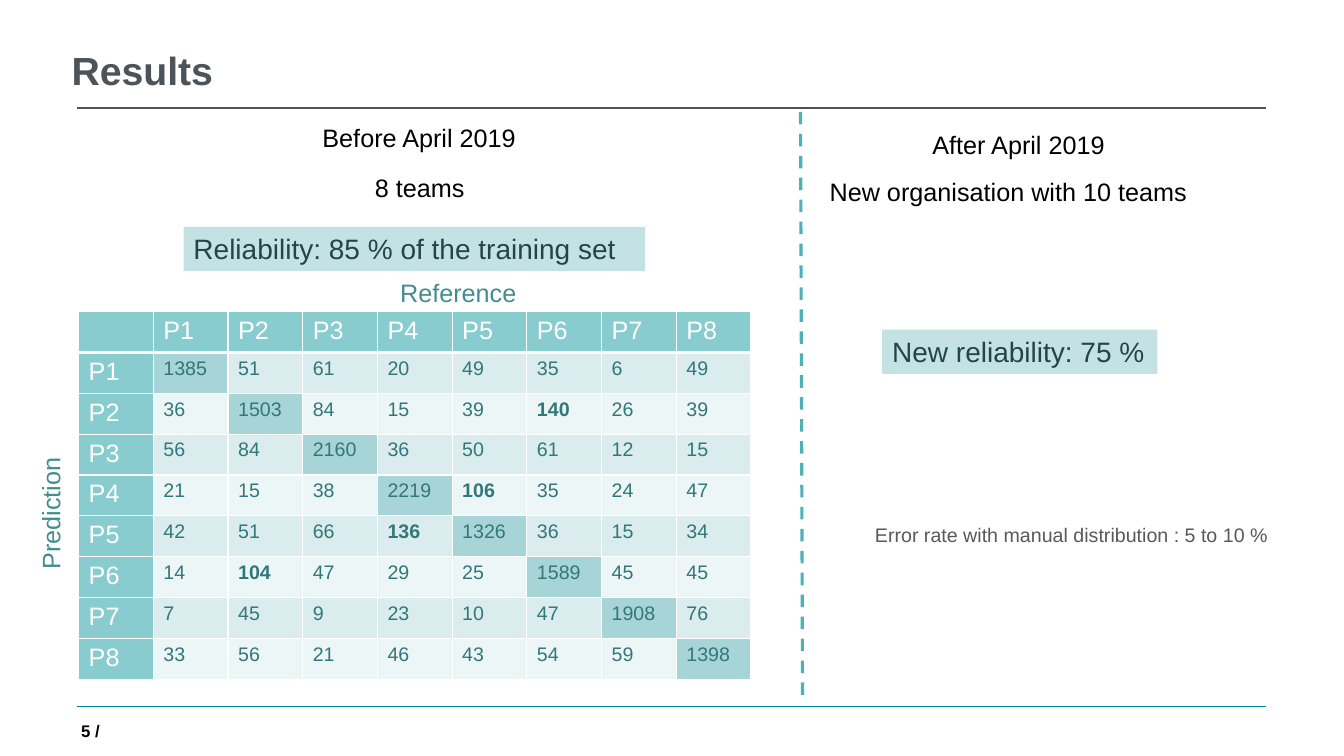
import pptx
import pptx.util
import pptx.dml.color
import pptx.enum.dml
import pptx.enum.shapes
import pptx.enum.text
import pptx.oxml
import pptx.oxml.ns

SCALE = 9144  # EMU per px, 100 px to the inch
WHITE, TEAL = "FFFFFF", "89CCCF"
DIAGONAL, BANDS = "A7D4D7", ("DAECED", "EDF6F6")
ANCHOR = pptx.enum.text.MSO_ANCHOR
ALIGN = pptx.enum.text.PP_ALIGN

TEAMS = ["P1", "P2", "P3", "P4", "P5", "P6", "P7", "P8"]
COUNTS = [
    [1385, 51, 61, 20, 49, 35, 6, 49],
    [36, 1503, 84, 15, 39, 140, 26, 39],
    [56, 84, 2160, 36, 50, 61, 12, 15],
    [21, 15, 38, 2219, 106, 35, 24, 47],
    [42, 51, 66, 136, 1326, 36, 15, 34],
    [14, 104, 47, 29, 25, 1589, 45, 45],
    [7, 45, 9, 23, 10, 47, 1908, 76],
    [33, 56, 21, 46, 43, 54, 59, 1398],
]


def px(n):
    return pptx.util.Emu(n * SCALE)


def rgb(code):
    return pptx.dml.color.RGBColor.from_string(code)


def set_text(tf, text, size, color, bold=False, align=ALIGN.LEFT):
    p = tf.paragraphs[0]
    p.alignment = align
    r = p.add_run()
    r.text = text
    font = {"name": "Arial", "size": pptx.util.Pt(size), "bold": bold}
    for key, value in font.items():
        setattr(r.font, key, value)
    r.font.color.rgb = rgb(color)


def add_text(s, box, text, size, color, rotation=0, frame=None, **style):
    sp = s.shapes.add_textbox(*map(px, box))
    sp.rotation = rotation
    for key, value in {"word_wrap": False, **(frame or {})}.items():
        setattr(sp.text_frame, key, value)
    set_text(sp.text_frame, text, size, color, **style)


def add_callout(s, box, text):
    sp = s.shapes.add_shape(pptx.enum.shapes.MSO_SHAPE.RECTANGLE, *map(px, box))
    sp.shadow.inherit = False
    sp.fill.solid()
    sp.fill.fore_color.rgb = rgb("C4E2E4")
    sp.line.fill.background()
    sp.text_frame.word_wrap = True
    sp.text_frame.vertical_anchor = ANCHOR.TOP
    set_text(sp.text_frame, text, 20, "214649")


def add_line(s, ends, color, width, dash=None):
    straight = pptx.enum.shapes.MSO_CONNECTOR.STRAIGHT
    sp = s.shapes.add_connector(straight, *map(px, ends))
    sp.line.color.rgb = rgb(color)
    sp.line.width = pptx.util.Pt(width)
    if dash:
        sp.line.dash_style = dash
    sp._element.spPr.append(pptx.oxml.parse_xml(
        "<a:effectLst %s/>" % pptx.oxml.ns.nsdecls("a")))


def style_cell(cell, fill, bottom=1):
    # Borders come before the fill in the cell properties
    tcPr = cell._tc.get_or_add_tcPr()
    for side, width in {"L": 1, "R": 1, "T": 1, "B": bottom}.items():
        tcPr.append(pptx.oxml.parse_xml(
            '<a:ln%s %s w="%d"><a:solidFill><a:srgbClr val="%s"/></a:solidFill></a:ln%s>'
            % (side, pptx.oxml.ns.nsdecls("a"), pptx.util.Pt(width), WHITE, side)))
    cell.fill.solid()
    cell.fill.fore_color.rgb = rgb(fill)


def add_confusion_matrix(s, box):
    n = len(TEAMS) + 1
    left, top, width, height = map(px, box)
    table = s.shapes.add_table(n, n, left, top, width, height).table
    table.first_row = table.horz_banding = False
    for column in table.columns:
        column.width = width // n
    for row in table.rows:
        row.height = height // n

    # Header row and header column
    style_cell(table.cell(0, 0), TEAL, bottom=3)
    for i, team in enumerate(TEAMS, 1):
        for cell, bottom in ((table.cell(0, i), 3), (table.cell(i, 0), 1)):
            style_cell(cell, TEAL, bottom)
            set_text(cell.text_frame, team, 18, WHITE)

    # Counts: correct ones on the diagonal, large confusions in bold
    for i, counts in enumerate(COUNTS):
        for j, count in enumerate(counts):
            cell = table.cell(i + 1, j + 1)
            style_cell(cell, DIAGONAL if i == j else BANDS[i % 2])
            set_text(cell.text_frame, str(count), 14, "32777A",
                     bold=i != j and count > 100)


def main():
    prs = pptx.Presentation()
    prs.slide_width, prs.slide_height = px(1333), px(750)
    s = prs.slides.add_slide(prs.slide_layouts[6])

    # Title, rules and page number
    no_margins = dict.fromkeys(
        ("margin_left", "margin_right", "margin_top", "margin_bottom"), 0)
    middle = {**no_margins, "vertical_anchor": ANCHOR.MIDDLE}
    add_line(s, (76, 701, 1256, 701), "0082A4", 1)
    add_text(s, (60, 715, 39, 20), "5 /", 12, "000000", frame=middle,
             bold=True, align=ALIGN.RIGHT)
    add_line(s, (76, 107, 1256, 107), "4C5459", 1)
    add_text(s, (67, 28, 1200, 82), "Results", 28, "4C5459", bold=True,
             frame={**middle, "margin_left": px(4), "margin_right": px(4),
                    "word_wrap": True})

    # Before April 2019
    add_confusion_matrix(s, (78, 309, 667, 365))
    add_text(s, (387, 270, 137, 40), "Reference", 18, "438D91")
    add_text(s, (-16, 489, 132, 40), "Prediction", 18, "438D91", rotation=270)
    add_callout(s, (182, 225, 458, 44), "Reliability: 85 % of the training set")
    add_text(s, (310, 116, 214, 40), "Before April 2019", 18, "000000")
    add_text(s, (362, 166, 110, 40), "8 teams", 18, "000000")

    # Divider
    add_line(s, (794, 111, 796, 698), "4CB2B6", 2.25,
             pptx.enum.dml.MSO_LINE.DASH)

    # After April 2019
    add_text(s, (915, 123, 193, 40), "After April 2019", 18, "000000")
    add_text(s, (813, 170, 378, 40), "New organisation with 10 teams", 18, "000000")
    add_callout(s, (875, 327, 273, 44), "New reliability: 75 %")
    add_text(s, (858, 514, 417, 34),
             "Error rate with manual distribution : 5 to 10 %", 14, "595959")

    prs.save("out.pptx")


if __name__ == "__main__":
    main()
